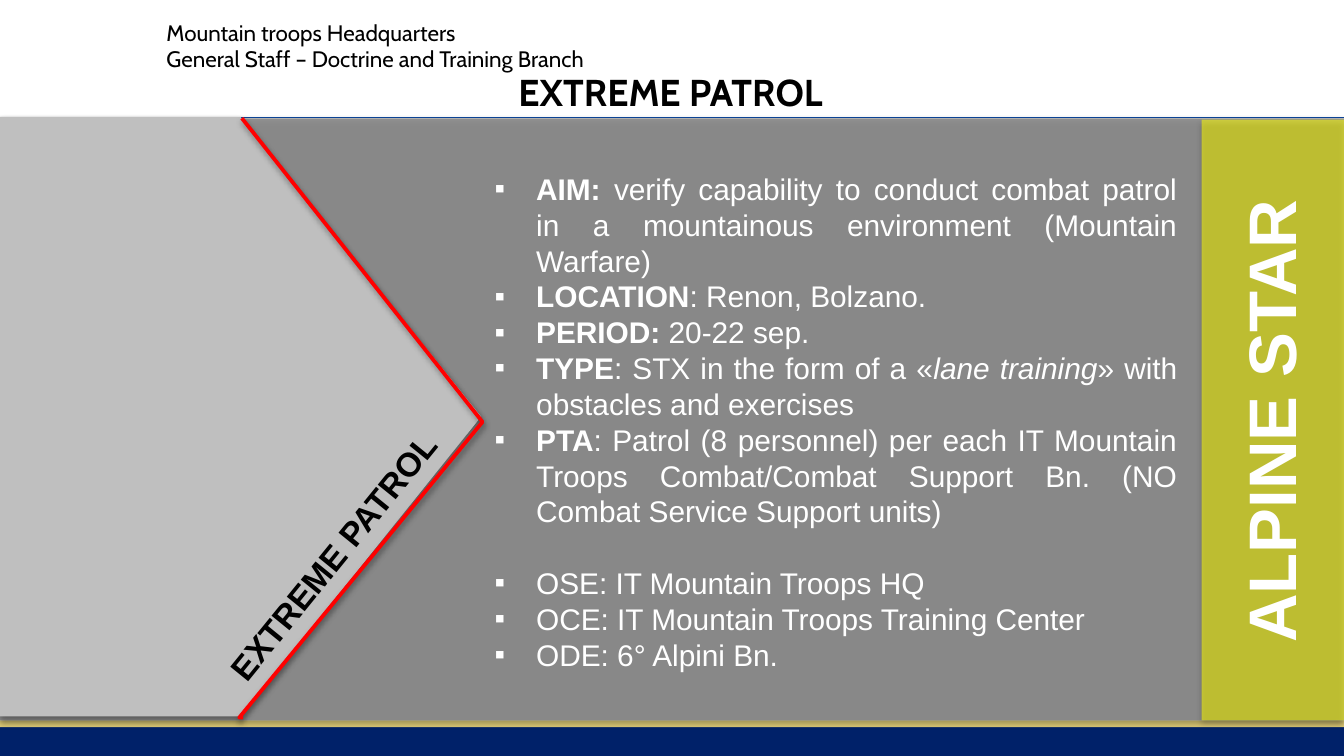
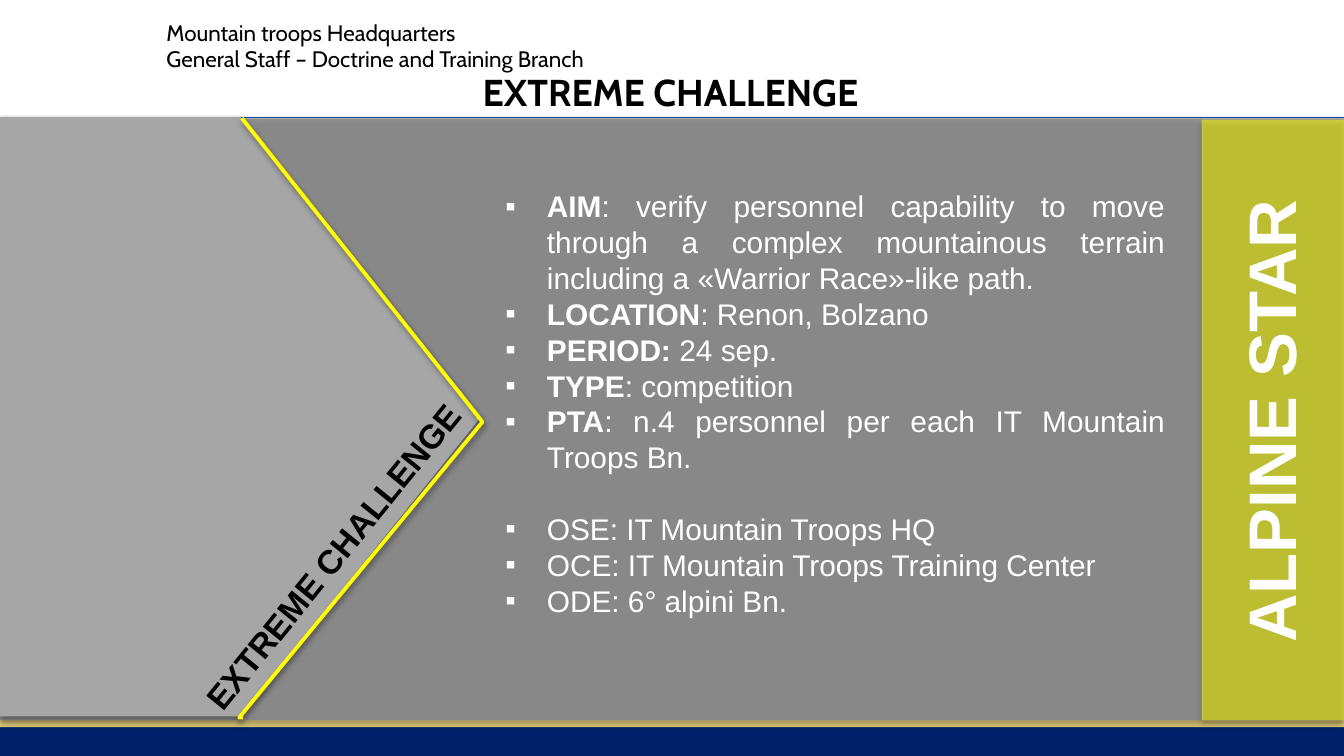
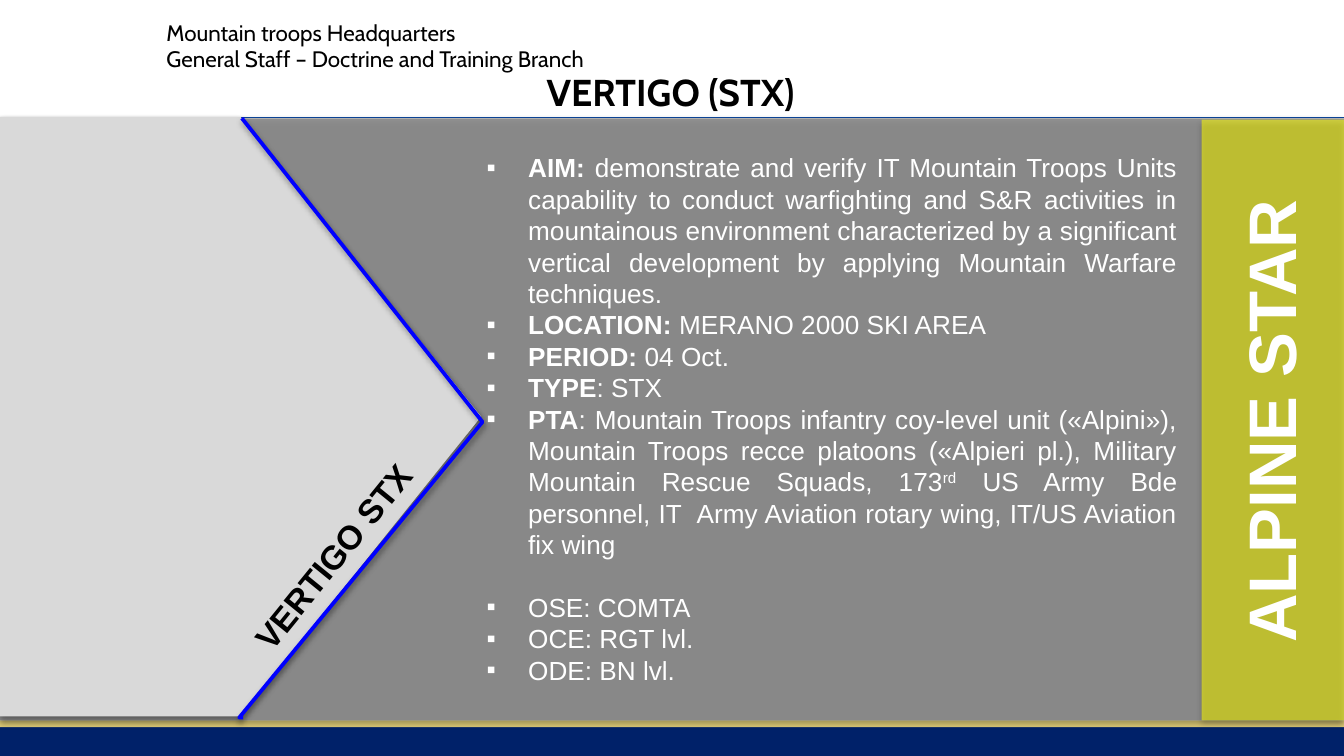
from pptx import Presentation
from pptx.dml.color import RGBColor
from pptx.enum.shapes import MSO_CONNECTOR, MSO_SHAPE
from pptx.enum.text import MSO_ANCHOR, MSO_AUTO_SIZE, PP_ALIGN
from pptx.oxml.ns import qn
from pptx.util import Inches, Pt
from lxml.etree import SubElement

WHITE = RGBColor(0xFF, 0xFF, 0xFF)
BLACK = RGBColor(0, 0, 0)
NAVY = RGBColor(0x00, 0x21, 0x69)
GOLD = RGBColor(0xE4, 0xD0, 0x79)
RULE_BLUE = RGBColor(0x0B, 0x43, 0x95)
PANEL_GRAY = RGBColor(0x80, 0x80, 0x80)
YELLOW = RGBColor(0xFF, 0xFF, 0x00)
RED = RGBColor(0xFF, 0, 0)
BLUE = RGBColor(0, 0, 0xFF)
SILVER = RGBColor(0xBF, 0xBF, 0xBF)
MID_GRAY = RGBColor(0xA6, 0xA6, 0xA6)
PALE_GRAY = RGBColor(0xD9, 0xD9, 0xD9)

HEAD_FONT, BODY_FONT = "Cabin", "Arial"
OFFICE = "Mountain troops Headquarters\vGeneral Staff – Doctrine and Training Branch"
RIBBON = "ALPINE STAR"
CHEVRON = [(1.8, 0.88), (3.59, 3.14), (1.78, 5.34), (1.81, 5.34)]
LINE_RATIO = 1.2

B, I, SUP, N = "bold", "italic", "superscript", "normal"

SLIDES = [
    {
        "title": "EXTREME PATROL", "tag": "EXTREME PATROL",
        "plate": SILVER, "edge": RED,
        "box": (3.58, 1.07, 5.28, 4.29), "inset": 0.2, "size": 16,
        "facts": [
            [("AIM: ", B), ("verify capability to conduct combat patrol in a mountainous "
                            "environment (Mountain Warfare)", N)],
            [("LOCATION", B), (": Renon, Bolzano.", N)],
            [("PERIOD: ", B), ("20-22 sep.", N)],
            [("TYPE", B), (": STX in the form of a «", N), ("lane training", I),
             ("» with obstacles and exercises", N)],
            [("PTA", B), (": Patrol (8 personnel) per each IT Mountain Troops Combat/Combat "
                          "Support Bn. (NO Combat Service Support units)", N)],
        ],
        "command": ["OSE: IT Mountain Troops HQ",
                    "OCE: IT Mountain Troops Training Center",
                    "ODE: 6° Alpini Bn."],
    },
    {
        "title": "EXTREME CHALLENGE", "tag": "EXTREME CHALLENGE",
        "plate": MID_GRAY, "edge": YELLOW,
        "box": (3.66, 1.08, 5.11, 3.87), "inset": 0.32, "size": 16,
        "facts": [
            [("AIM", B), (": verify personnel capability to move through a complex mountainous "
                          "terrain including a «Warrior Race»-like path.", N)],
            [("LOCATION", B), (": Renon, Bolzano", N)],
            [("PERIOD: ", B), ("24 sep.", N)],
            [("TYPE", B), (": competition", N)],
            [("PTA", B), (": n.4 personnel per each IT Mountain Troops Bn.", N)],
        ],
        "command": ["OSE: IT Mountain Troops HQ",
                    "OCE: IT Mountain Troops Training Center",
                    "ODE: 6° alpini Bn."],
    },
    {
        "title": "VERTIGO (STX)", "tag": "VERTIGO STX",
        "plate": PALE_GRAY, "edge": BLUE,
        "box": (3.52, 1.08, 5.34, 4.11), "inset": 0.05, "size": 14,
        "facts": [
            [("AIM: ", B), ("demonstrate and verify IT Mountain Troops Units capability to conduct "
                            "warfighting and S&R activities in mountainous environment "
                            "characterized by a significant vertical development by applying "
                            "Mountain Warfare techniques.", N)],
            [("LOCATION: ", B), ("MERANO 2000 SKI AREA", N)],
            [("PERIOD: ", B), ("04 Oct.", N)],
            [("TYPE", B), (": STX", N)],
            [("PTA", B), (": Mountain Troops infantry coy-level unit («Alpini»), Mountain Troops "
                          "recce platoons («Alpieri pl.), Military Mountain Rescue Squads, 173", N),
             ("rd", SUP), (" US Army Bde personnel, IT  Army Aviation rotary wing, IT/US Aviation "
                           "fix wing", N)],
        ],
        "command": ["OSE: COMTA", "OCE: RGT lvl.", "ODE: BN lvl."],
    },
]


def place(shape, box):
    shape.left, shape.top, shape.width, shape.height = map(Inches, box)


def set_font(font, name, size, color, bold=False):
    font.name, font.size, font.bold = name, Pt(size), bold
    font.color.rgb = color


def add_shadow(shape, alpha=35, dist=23000):
    effects = SubElement(shape.element.spPr, qn("a:effectLst"))
    shadow = SubElement(effects, qn("a:outerShdw"), blurRad="40000", dist=str(dist),
                        dir="5400000", rotWithShape="0")
    color = SubElement(shadow, qn("a:srgbClr"), val=str(BLACK))
    SubElement(color, qn("a:alpha"), val=str(alpha * 1000))


def add_block(shapes, kind, box, color, alpha=100, shadow=True):
    sp = shapes.add_shape(kind, *map(Inches, box))
    sp.fill.solid()
    sp.fill.fore_color.rgb = color
    sp.line.fill.background()
    if alpha < 100:
        clr = sp.element.spPr.find(qn("a:solidFill"))[0]
        SubElement(clr, qn("a:alpha"), val=str(alpha * 1000))
    if shadow:
        add_shadow(sp)
    else:
        sp.shadow.inherit = False
    return sp


def add_text(shapes, text, box, name, size, color, bold=True, align=PP_ALIGN.CENTER, rotation=0):
    tb = shapes.add_textbox(*map(Inches, box))
    tb.rotation = rotation
    tf = tb.text_frame
    tf.word_wrap = True
    p = tf.paragraphs[0]
    p.text = text
    p.alignment = align
    for r in p.runs:
        set_font(r.font, name, size, color, bold)
    return tb


def dress_layout(layout, s):
    parts = [
        add_block(s.shapes, MSO_SHAPE.RECTANGLE, (-0.01, 5.37, 10.02, 0.27), NAVY, shadow=False),
        add_block(s.shapes, MSO_SHAPE.RECTANGLE, (-0.01, 5.36, 10.02, 0.05), GOLD, shadow=False),
        add_text(s.shapes, OFFICE, (1.14, 0.09, 4.59, 0.79), HEAD_FONT, 12, BLACK,
                 bold=False, align=PP_ALIGN.LEFT),
    ]
    for part in parts:
        layout.shapes.element.append(part.element)


def add_backdrop(s, plate, edge, tag):
    add_block(s.shapes, MSO_SHAPE.RECTANGLE, (0, 0.88, 10, 4.48), PANEL_GRAY, alpha=84)

    rule = s.shapes.add_connector(MSO_CONNECTOR.STRAIGHT, 0, Inches(0.87), Inches(10), Inches(0.87))
    rule.line.color.rgb = RULE_BLUE
    rule.line.width = Pt(0.25)
    SubElement(rule.element.spPr, qn("a:effectLst"))

    add_block(s.shapes, MSO_SHAPE.PENTAGON, (0, 0.87, 3.58, 4.46), plate)
    add_text(s.shapes, tag, (0.66, 3.94, 3.63, 0.4), BODY_FONT, 18, BLACK, rotation=309.1)

    points = [(Inches(x), Inches(y)) for x, y in CHEVRON]
    builder = s.shapes.build_freeform(*points[0])
    builder.add_line_segments(points[1:], close=False)
    chevron = builder.convert_to_shape()
    chevron.fill.background()
    chevron.line.color.rgb = edge
    chevron.line.width = Pt(2)
    add_shadow(chevron, alpha=38, dist=20000)

    ribbon = s.shapes.add_group_shape()
    add_block(ribbon.shapes, MSO_SHAPE.RECTANGLE, (8.94, 0.89, 1.06, 4.47), YELLOW, alpha=55)
    add_text(ribbon.shapes, RIBBON, (7.64, 2.78, 3.63, 0.71), BODY_FONT, 36, WHITE, rotation=270)


def fill_title(s, text):
    title = s.shapes.title
    place(title, (0.41, 0.14, 9.16, 0.79))
    tf = title.text_frame
    tf.text = text
    tf.auto_size = MSO_AUTO_SIZE.NONE
    tf.vertical_anchor = MSO_ANCHOR.BOTTOM
    tf.margin_bottom = Inches(0.08)
    p = tf.paragraphs[0]
    p.alignment = PP_ALIGN.CENTER
    set_font(p.runs[0].font, HEAD_FONT, 20, BLACK, True)
    s.shapes.element.append(title.element)


def fill_body(s, item):
    body = s.placeholders[1]
    place(body, item["box"])
    tf = body.text_frame
    tf.word_wrap = True
    tf.auto_size = MSO_AUTO_SIZE.NONE
    tf.vertical_anchor = MSO_ANCHOR.TOP
    tf.margin_top = Inches(item["inset"])
    line_height = Pt(item["size"] * LINE_RATIO)
    rows = item["facts"] + [[(text, N)] for text in item["command"]]
    for i, row in enumerate(rows):
        p = tf.paragraphs[0] if i == 0 else tf.add_paragraph()
        pPr = p._p.get_or_add_pPr()
        pPr.set("marL", str(Inches(0.31)))
        pPr.set("indent", str(-Inches(0.31)))
        SubElement(pPr, qn("a:buChar"), char="▪")
        p.alignment = PP_ALIGN.JUSTIFY
        p.line_spacing = line_height
        p.space_before = line_height if i == len(item["facts"]) else Pt(0)
        for text, style in row:
            r = p.add_run()
            r.text = text
            set_font(r.font, BODY_FONT, item["size"], WHITE, style == B)
            r.font.italic = style == I
            if style == SUP:
                r._r.get_or_add_rPr().set("baseline", "30000")
    s.shapes.element.append(body.element)


def main():
    prs = Presentation()
    prs.slide_width = Inches(10)
    prs.slide_height = prs.slide_width * 9 // 16
    layout = prs.slide_layouts[1]
    for i, item in enumerate(SLIDES):
        s = prs.slides.add_slide(layout)
        if i == 0:
            dress_layout(layout, s)
        add_backdrop(s, item["plate"], item["edge"], item["tag"])
        fill_title(s, item["title"])
        fill_body(s, item)
    prs.save("out.pptx")


if __name__ == "__main__":
    main()
